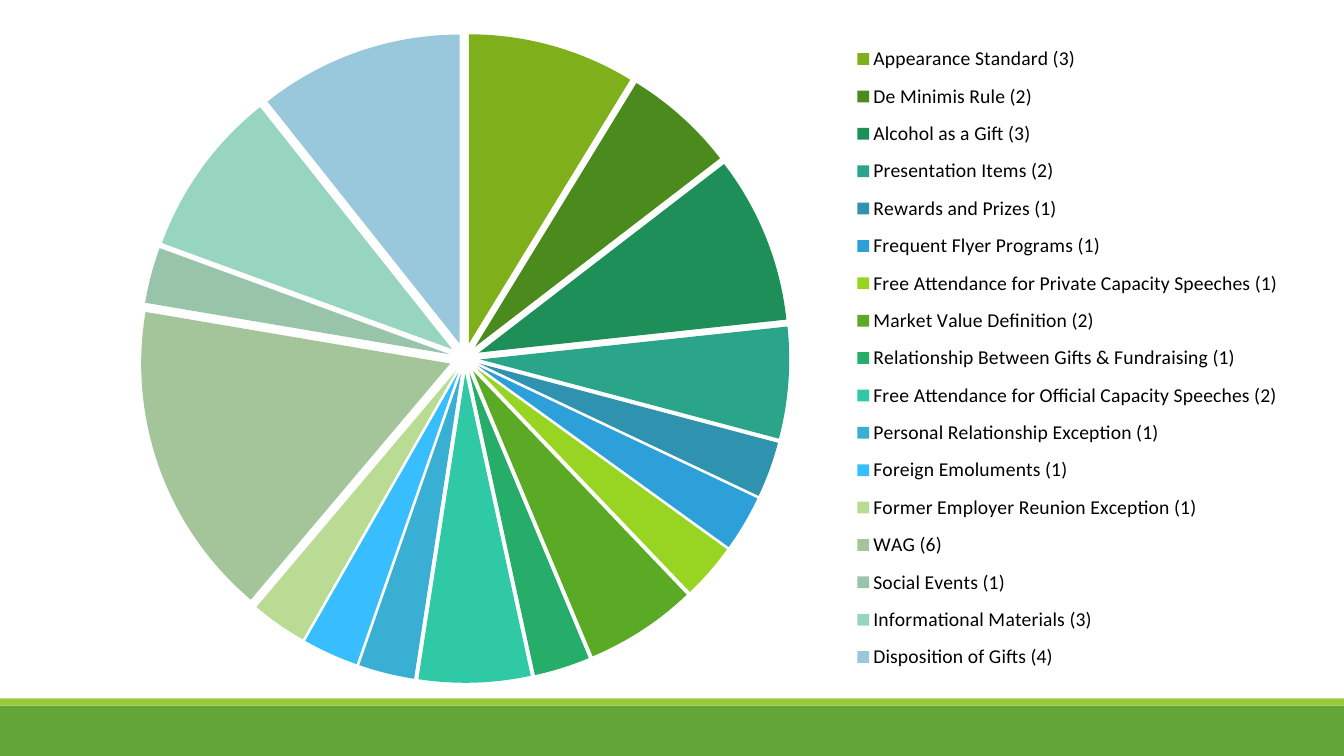
from lxml import etree
from pptx import Presentation
from pptx import util as u
from pptx.chart.data import CategoryChartData
from pptx.dml.color import RGBColor
from pptx.enum import chart as ch, shapes
from pptx.oxml.ns import qn

BLACK = RGBColor(0x00, 0x00, 0x00)
WHITE = RGBColor(0xFF, 0xFF, 0xFF)
GREEN = RGBColor(0x63, 0xA5, 0x37)
LIME = RGBColor(0x99, 0xCB, 0x38)

# Topic, slice size, slice colour
TOPICS = [
    ("Appearance Standard (3)", 9, RGBColor(0x7F, 0xB0, 0x1C)),
    ("De Minimis Rule (2)", 6, RGBColor(0x4B, 0x8B, 0x1E)),
    ("Alcohol as a Gift (3)", 9, RGBColor(0x1E, 0x8F, 0x59)),
    ("Presentation Items (2)", 6, RGBColor(0x2A, 0xA5, 0x8A)),
    ("Rewards and Prizes (1)", 3, RGBColor(0x2F, 0x93, 0xB0)),
    ("Frequent Flyer Programs (1)", 3, RGBColor(0x2D, 0x9F, 0xD9)),
    ("Free Attendance for Private Capacity Speeches (1)", 3, RGBColor(0x98, 0xD5, 0x22)),
    ("Market Value Definition (2)", 6, RGBColor(0x5B, 0xAA, 0x25)),
    ("Relationship Between Gifts & Fundraising (1)", 3, RGBColor(0x25, 0xAD, 0x69)),
    ("Free Attendance for Official Capacity Speeches (2)", 6, RGBColor(0x2F, 0xCA, 0xA5)),
    ("Personal Relationship Exception (1)", 3, RGBColor(0x39, 0xB0, 0xD3)),
    ("Foreign Emoluments (1)", 3, RGBColor(0x38, 0xBE, 0xFF)),
    ("Former Employer Reunion Exception (1)", 3, RGBColor(0xBA, 0xDB, 0x94)),
    ("WAG (6)", 17, RGBColor(0xA4, 0xC4, 0x9A)),
    ("Social Events (1)", 3, RGBColor(0x98, 0xC5, 0xA9)),
    ("Informational Materials (3)", 9, RGBColor(0x98, 0xD5, 0xC1)),
    ("Disposition of Gifts (4)", 11, RGBColor(0x99, 0xC8, 0xDD)),
]


def make_layout(x, y, w, h, inner=False):
    """Manual chart layout, in fractions of the chart area."""
    layout = etree.Element(qn("c:layout"))
    manual = etree.SubElement(layout, qn("c:manualLayout"))
    values = [("xMode", "edge"), ("yMode", "edge"),
              ("x", x), ("y", y), ("w", w), ("h", h)]
    if inner:
        values.insert(0, ("layoutTarget", "inner"))
    for tag, value in values:
        etree.SubElement(manual, qn("c:" + tag)).set("val", str(value))
    return layout


def add_footer(slide, left, top, width, height):
    strip = u.Cm(0.18)
    bands = [(top + strip, height - strip, GREEN), (top, strip, LIME)]
    for y, h, color in bands:
        sp = slide.shapes.add_shape(shapes.MSO_SHAPE.RECTANGLE, left, y, width, h)
        sp.shadow.inherit = False
        sp.fill.solid()
        sp.fill.fore_color.rgb = color
        sp.line.fill.background()


def add_topic_pie(slide, left, top, width, height):
    data = CategoryChartData()
    data.categories = [name for name, _, _ in TOPICS]
    data.add_series("Series 1", [size for _, size, _ in TOPICS])
    chart = slide.shapes.add_chart(
        ch.XL_CHART_TYPE.PIE, left, top, width, height, data).chart
    chart.has_title = False
    chart.font.name = "Calibri"
    chart.font.size = u.Pt(18)
    chart.font.color.rgb = BLACK

    # Legend
    chart.has_legend = True
    legend = chart.legend
    legend.position = ch.XL_LEGEND_POSITION.RIGHT
    legend.include_in_layout = False
    legend.font.size = u.Pt(14)
    legend.font.name = "Calibri"
    legend.font.color.rgb = BLACK

    # Slices, pulled apart by 5 %
    plot = chart.plots[0]
    plot.vary_by_categories = True
    series = plot.series[0]
    for i, (_, _, color) in enumerate(TOPICS):
        fmt = series.points[i].format
        fmt.fill.solid()
        fmt.fill.fore_color.rgb = color
        fmt.line.fill.background()
    explosion = etree.Element(qn("c:explosion"))
    explosion.set("val", "5")
    series._element.find(qn("c:dPt")).addprevious(explosion)

    # Places of the pie and the legend
    area = chart._chartSpace.chart.plotArea
    for old in area.findall(qn("c:layout")):
        area.remove(old)
    area.insert(0, make_layout(0.07, 0.02, 0.52, 0.96, inner=True))
    box = chart._chartSpace.chart.find(qn("c:legend"))
    for old in box.findall(qn("c:layout")):
        box.remove(old)
    box.find(qn("c:legendPos")).addnext(make_layout(0.63, 0.02, 0.36, 0.96))


def main():
    prs = Presentation()
    prs.slide_width, prs.slide_height = u.Cm(33.87), u.Cm(19.05)
    slide = prs.slides.add_slide(prs.slide_layouts[6])
    slide.background.fill.solid()
    slide.background.fill.fore_color.rgb = WHITE
    footer_top = u.Cm(17.6)
    add_footer(slide, 0, footer_top, prs.slide_width, prs.slide_height - footer_top)
    add_topic_pie(slide, u.Cm(1.27), u.Cm(0.51), u.Cm(31.65), u.Cm(17.04))
    prs.save("out.pptx")


if __name__ == "__main__":
    main()
